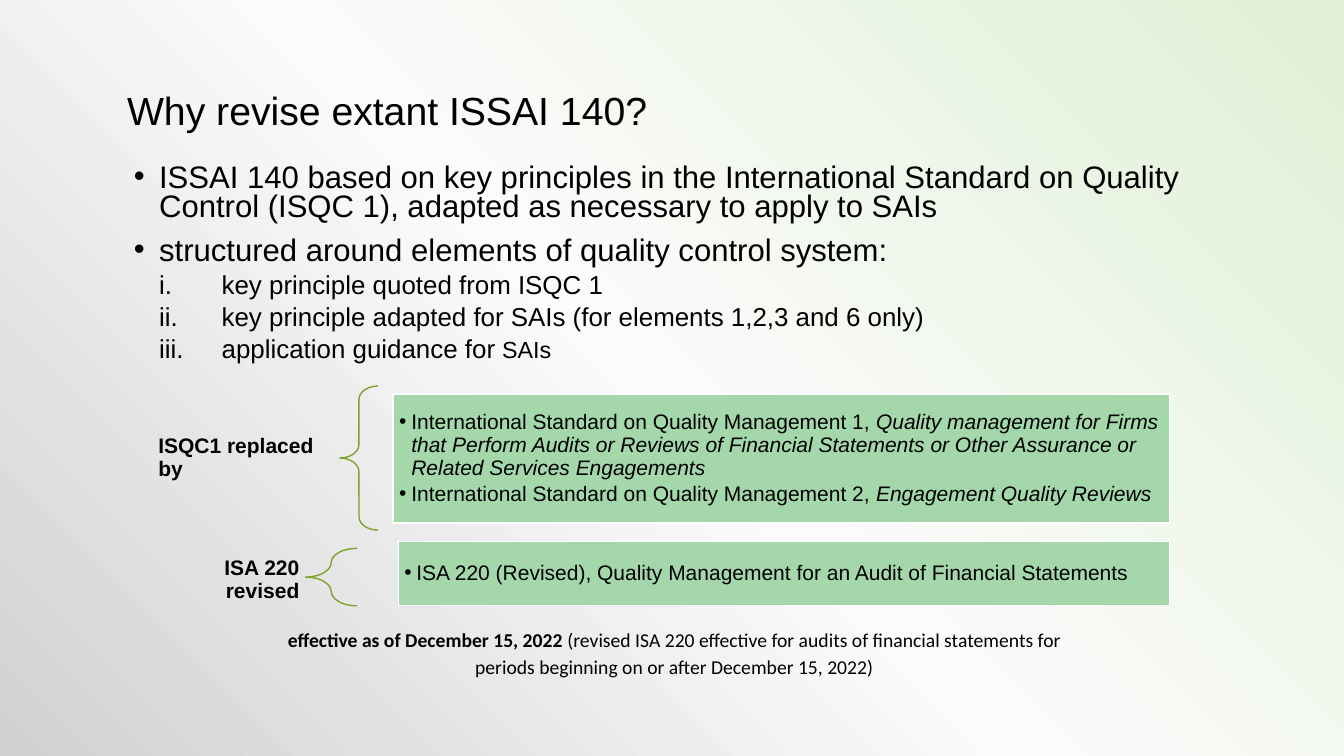
"""Build the slide on why the extant ISSAI 140 is revised."""
from dataclasses import dataclass

from lxml import etree
from pptx import Presentation
from pptx import util as u
from pptx.dml.color import RGBColor
from pptx.enum import shapes, text
from pptx.oxml import ns

ANCHOR = text.MSO_ANCHOR
ALIGN = text.PP_ALIGN
BLACK, GREEN, BRACE_GREEN, WHITE = "000000", "A4D8AB", "7BA32D", "FFFFFF"


@dataclass(frozen=True)
class Box:
    left: float
    top: float
    width: float
    height: float

    def lengths(self) -> list:
        return [u.Inches(n) for n in (self.left, self.top, self.width, self.height)]


@dataclass(frozen=True)
class Piece:
    words: str
    size: float = 15
    bold: bool = False
    italic: bool = False
    font: str = "Arial"


@dataclass(frozen=True)
class Block:
    pieces: tuple[Piece, ...]
    bullet: str = ""
    indent: float = 0
    hanging: float = 0
    spacing: float = 0.9
    before: float = 0
    after: float = 0
    align: ALIGN = ALIGN.LEFT


@dataclass(frozen=True)
class Change:
    label: str
    label_box: Box
    label_align: ALIGN
    brace_box: Box
    panel_box: Box
    standards: tuple[tuple[Piece, ...], ...]


BODY = [
    Block((Piece("ISSAI 140 based on key principles in the International Standard on Quality "
                 "Control (ISQC 1), adapted as necessary to apply to SAIs", 22.2),),
          "•", 0.25, 0.25, 0.8),
    Block((Piece("structured around elements of quality control system:", 22.2),),
          "•", 0.25, 0.25, 0.8, 10),
    *(Block(pieces, "romanLcPeriod", 0.87, 0.62, 0.8, 5) for pieces in (
        (Piece("key principle quoted from ISQC 1", 18.5),),
        (Piece("key principle adapted for SAIs (for elements 1,2,3 and 6 only)", 18.5),),
        (Piece("application guidance for ", 18.5), Piece("SAIs", 16.6)),
    )),
]

CHANGES = [
    Change("ISQC1 replaced by", Box(1.45, 4.25, 1.91, 0.59), ALIGN.LEFT,
           Box(3.37, 3.83, 0.38, 1.43), Box(3.9, 3.91, 7.7, 1.28), (
               (Piece("International Standard on Quality Management 1, "),
                Piece("Quality management for Firms that Perform Audits or Reviews of "
                      "Financial Statements or Other Assurance or Related Services "
                      "Engagements", italic=True)),
               (Piece("International Standard on Quality Management 2, "),
                Piece("Engagement Quality Reviews", italic=True)))),
    Change("ISA 220 revised", Box(1.45, 5.37, 1.64, 0.77), ALIGN.RIGHT,
           Box(3.03, 5.44, 0.51, 0.57), Box(3.95, 5.37, 7.65, 0.64),
           ((Piece("ISA 220 (Revised), Quality Management for an Audit of "
                   "Financial Statements"),),)),
]

EFFECTIVE = Block((
    Piece("effective as of December 15, 2022 ", 14, bold=True, font="Calibri"),
    Piece("(revised ISA 220 effective for audits of financial statements for periods "
          "beginning on or after December 15, 2022)", 14, font="Calibri"),
), spacing=1.17, after=6, align=ALIGN.CENTER)


def color(value: str) -> RGBColor:
    return RGBColor.from_string(value)


def add_bullet(paragraph, block: Block) -> None:
    properties = paragraph._p.get_or_add_pPr()
    properties.set("marL", str(u.Inches(block.indent)))
    properties.set("indent", str(-u.Inches(block.hanging)))
    if block.bullet == "•":
        etree.SubElement(properties, ns.qn("a:buFont"), typeface="Arial")
        etree.SubElement(properties, ns.qn("a:buChar"), char=block.bullet)
    else:
        etree.SubElement(properties, ns.qn("a:buAutoNum"), type=block.bullet)


def write(frame, blocks: list[Block], anchor: ANCHOR = ANCHOR.TOP,
          side: float = 0.1, edge: float = 0.05) -> None:
    frame.word_wrap = True
    frame.auto_size = text.MSO_AUTO_SIZE.NONE
    frame.vertical_anchor = anchor
    frame.margin_left = frame.margin_right = u.Inches(side)
    frame.margin_top = frame.margin_bottom = u.Inches(edge)
    for index, block in enumerate(blocks):
        paragraph = frame.add_paragraph() if index else frame.paragraphs[0]
        paragraph.alignment = block.align
        paragraph.line_spacing = block.spacing
        paragraph.space_before = u.Pt(block.before)
        paragraph.space_after = u.Pt(block.after)
        if block.bullet:
            add_bullet(paragraph, block)
        for piece in block.pieces:
            run = paragraph.add_run()
            run.text = piece.words
            run.font.name = piece.font
            run.font.size = u.Pt(piece.size)
            run.font.bold = piece.bold
            run.font.italic = piece.italic
            run.font.color.rgb = color(BLACK)


def add_outlined(slide, kind: shapes.MSO_SHAPE, box: Box, line: str):
    shape = slide.shapes.add_shape(kind, *box.lengths())
    shape.shadow.inherit = False
    shape.fill.background()
    shape.line.color.rgb = color(line)
    shape.line.width = u.Pt(1)
    return shape


def add_change(slide, change: Change) -> None:
    label = slide.shapes.add_textbox(*change.label_box.lengths())
    write(label.text_frame, [Block((Piece(change.label, bold=True),), align=change.label_align)],
          ANCHOR.MIDDLE, 0.12, 0.04)
    brace = add_outlined(slide, shapes.MSO_SHAPE.LEFT_BRACE, change.brace_box, BRACE_GREEN)
    brace.adjustments[0] = 0.35
    brace.adjustments[1] = 0.5
    panel = add_outlined(slide, shapes.MSO_SHAPE.RECTANGLE, change.panel_box, WHITE)
    panel.fill.solid()
    panel.fill.fore_color.rgb = color(GREEN)
    write(panel.text_frame, [Block(pieces, "•", 0.12, 0.12, after=2.25)
                             for pieces in change.standards], ANCHOR.MIDDLE, 0.06, 0.06)


def paint_background(slide) -> None:
    slide.background.fill.gradient()
    gradient = slide.element.find(".//" + ns.qn("a:gradFill"))
    for child in list(gradient):
        gradient.remove(child)
    stops = etree.SubElement(gradient, ns.qn("a:gsLst"))
    for position, value, alpha in ((0, "DFF0D4", 100), (51, "FBFBFB", 83), (100, "D1D1D1", 100)):
        stop = etree.SubElement(stops, ns.qn("a:gs"), pos=str(position * 1000))
        shade = etree.SubElement(stop, ns.qn("a:srgbClr"), val=value)
        etree.SubElement(shade, ns.qn("a:alpha"), val=str(alpha * 1000))
    route = etree.SubElement(gradient, ns.qn("a:path"))
    route.set("path", "circle")
    etree.SubElement(route, ns.qn("a:fillToRect"), l="100000", b="100000")


def main() -> None:
    presentation = Presentation()
    presentation.slide_width = u.Inches(13.33)
    presentation.slide_height = u.Inches(7.5)
    slide = presentation.slides.add_slide(presentation.slide_layouts[5])
    paint_background(slide)
    title = slide.shapes.title
    title.left, title.top, title.width, title.height = Box(1.16, 0.4, 11.25, 0.98).lengths()
    write(title.text_frame, [Block((Piece("Why revise extant ISSAI 140?", 28),))], ANCHOR.BOTTOM)
    body = slide.shapes.add_textbox(*Box(1.23, 1.58, 11.12, 2.11).lengths())
    write(body.text_frame, BODY)
    for change in CHANGES:
        add_change(slide, change)
    note = slide.shapes.add_textbox(*Box(2.58, 6.14, 8.22, 0.65).lengths())
    write(note.text_frame, [EFFECTIVE])
    presentation.save("out.pptx")


if __name__ == "__main__":
    main()
